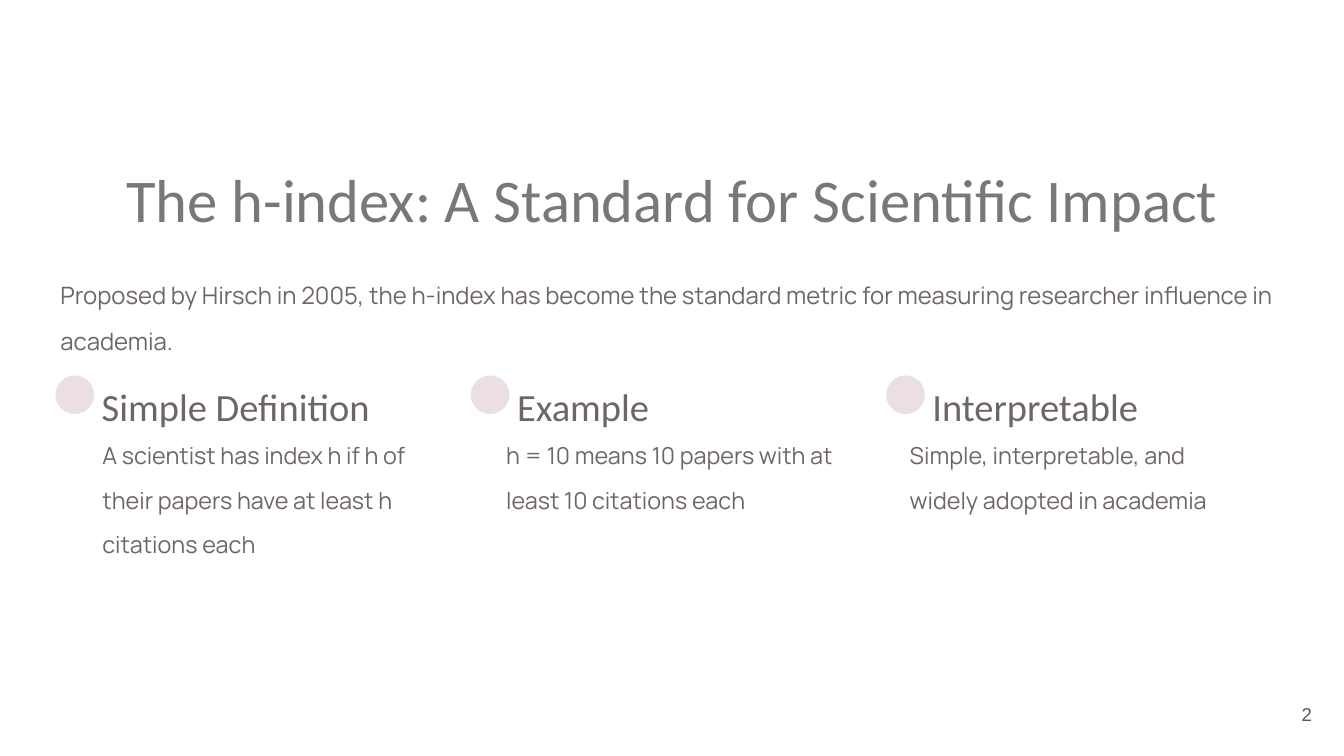
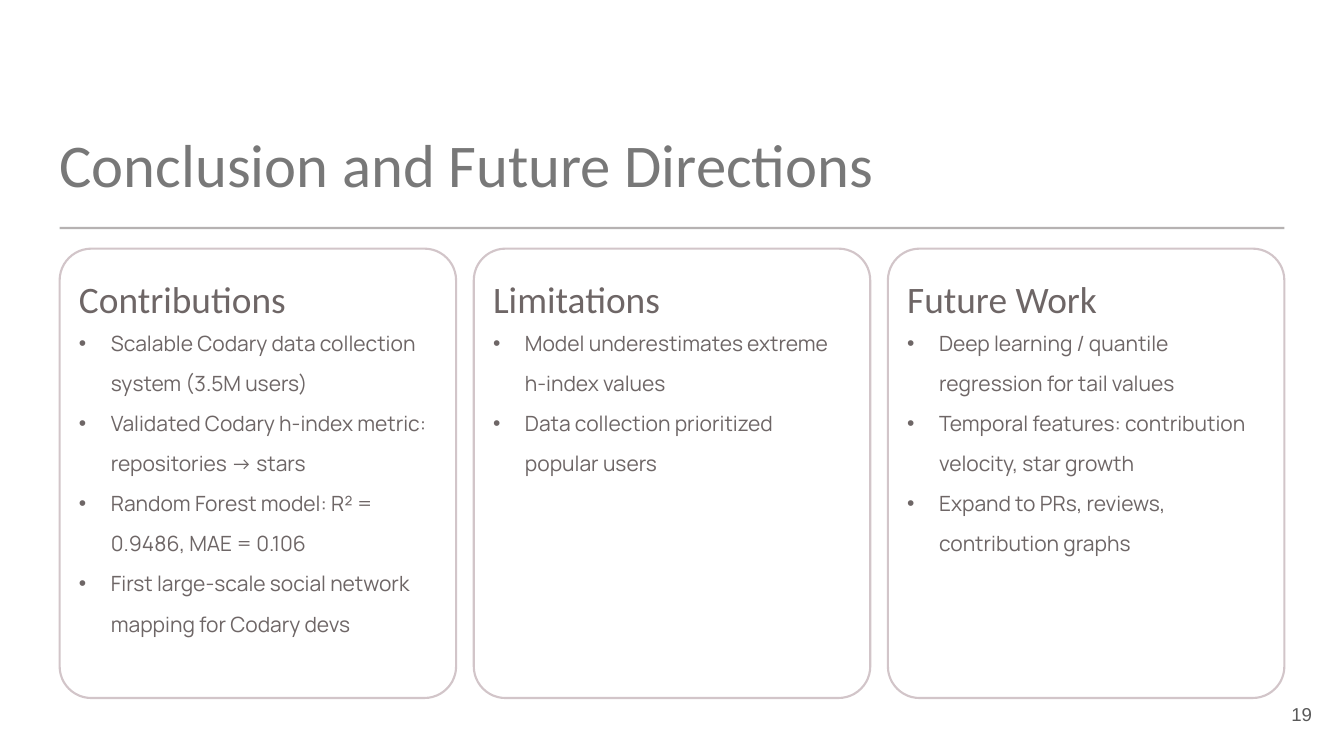
from dataclasses import dataclass

from lxml import etree
from pptx import Presentation
from pptx.dml.color import RGBColor
from pptx.enum.shapes import MSO_SHAPE
from pptx.enum.text import MSO_ANCHOR, MSO_AUTO_SIZE, PP_ALIGN
from pptx.oxml.ns import qn
from pptx.util import Inches, Pt

LEFT, CENTER, RIGHT = PP_ALIGN.LEFT, PP_ALIGN.CENTER, PP_ALIGN.RIGHT
TOP, MIDDLE = MSO_ANCHOR.TOP, MSO_ANCHOR.MIDDLE
RECTANGLE, ROUNDED = MSO_SHAPE.RECTANGLE, MSO_SHAPE.ROUNDED_RECTANGLE
FIXED_SIZE = MSO_AUTO_SIZE.NONE
TITLE_ONLY = 5

WIDTH, HEIGHT = 16, 9
MARGIN = 0.71
CONTENT_WIDTH = WIDTH - 2 * MARGIN


@dataclass(frozen=True)
class Style:
    font: str
    size: float
    color: str
    spacing: float = 1.0


class Theme:
    paper = "FFFFFF"
    ink = "6E6666"
    dot = "ECDFE3"
    outline = "D2C5C9"
    title = Style("Calibri", 52, "787878", 1.26)
    lead = Style("Manrope", 20.5, ink, 1.59)
    point_heading = Style("Calibri", 33, ink, 1.25)
    point_body = Style("Manrope", 20, ink, 1.59)
    card_heading = Style("Calibri", 32, ink, 1.25)
    card_body = Style("Manrope", 18, ink, 1.59)
    page_number = Style("Arial", 16, "595959")


POINTS = [
    ("Simple Definition",
     "A scientist has index h if h of their papers have at least h citations each"),
    ("Example", "h = 10 means 10 papers with at least 10 citations each"),
    ("Interpretable", "Simple, interpretable, and widely adopted in academia"),
]

CARDS = [
    ("Contributions", [
        "Scalable Codary data collection system (3.5M users)",
        "Validated Codary h-index metric: repositories → stars",
        "Random Forest model: R² = 0.9486, MAE = 0.106",
        "First large-scale social network mapping for Codary devs",
    ]),
    ("Limitations", [
        "Model underestimates extreme h-index values",
        "Data collection prioritized popular users",
    ]),
    ("Future Work", [
        "Deep learning / quantile regression for tail values",
        "Temporal features: contribution velocity, star growth",
        "Expand to PRs, reviews, contribution graphs",
    ]),
]


def inches(box):
    return [Inches(length) for length in box]


def add_bullet(para):
    props = para._p.get_or_add_pPr()
    props.set("marL", str(Inches(0.38)))
    props.set("indent", str(Inches(-0.4)))
    color = etree.SubElement(props, qn("a:buClr"))
    etree.SubElement(color, qn("a:srgbClr"), val=Theme.ink)
    etree.SubElement(props, qn("a:buFont"), typeface="Arial")
    etree.SubElement(props, qn("a:buChar"), char="•")


def write(shape, lines, style, align=LEFT, anchor=TOP, inset=0, bullets=False):
    frame = shape.text_frame
    frame.word_wrap = True
    frame.auto_size = FIXED_SIZE
    frame.vertical_anchor = anchor
    frame.margin_left = frame.margin_right = Inches(inset)
    frame.margin_top = frame.margin_bottom = Inches(inset)
    frame.text = "\n".join(lines)
    for para in frame.paragraphs:
        para.alignment = align
        para.line_spacing = style.spacing
        para.font.name = style.font
        para.font.size = Pt(style.size)
        para.font.color.rgb = RGBColor.from_string(style.color)
        if bullets:
            add_bullet(para)


def add_text(page, box, lines, style, **options):
    write(page.shapes.add_textbox(*inches(box)), lines, style, **options)


def add_panel(page, kind, box, fill, outline=None, radius=None):
    panel = page.shapes.add_shape(kind, *inches(box))
    panel.shadow.inherit = False
    panel.fill.solid()
    panel.fill.fore_color.rgb = RGBColor.from_string(fill)
    if outline:
        panel.line.color.rgb = RGBColor.from_string(outline)
        panel.line.width = Pt(1.8)
    else:
        panel.line.fill.background()
    if radius is not None:
        panel.adjustments[0] = radius
    return panel


def add_page(deck, title, title_box, number, **title_options):
    """Add a slide with its title and page number."""
    page = deck.slides.add_slide(deck.slide_layouts[TITLE_ONLY])
    heading = page.shapes.title
    heading.left, heading.top, heading.width, heading.height = inches(title_box)
    write(heading, [title], Theme.title, **title_options)
    add_text(page, (14.82, 8.16, 0.96, 0.69), [str(number)], Theme.page_number,
             align=RIGHT, anchor=MIDDLE, inset=0.16)
    return page


def add_point(page, left, top, body_left, heading, body):
    dot = 0.46
    add_panel(page, ROUNDED, (left, top + 0.05, dot, dot), Theme.dot, radius=0.5)
    add_text(page, (left + 0.55, top, 3.65, dot), [heading], Theme.point_heading)
    add_text(page, (body_left, top + 0.64, 3.92, 0.65), [body], Theme.point_body)


def add_card(page, box, heading, items):
    left, top, width, height = box
    pad = 0.23
    inner = width - 2 * pad
    add_panel(page, ROUNDED, box, Theme.paper, Theme.outline, radius=0.08)
    add_text(page, (left + pad, top + 0.19, inner, 0.46), [heading],
             Theme.card_heading)
    add_text(page, (left + pad, top + 0.8, inner, height - 1), items,
             Theme.card_body, bullets=True)


def add_rule(page, top):
    rule = add_panel(page, RECTANGLE, (MARGIN, top, CONTENT_WIDTH, 0.03), Theme.ink)
    color = rule.fill._xPr.find(qn("a:solidFill")).find(qn("a:srgbClr"))
    etree.SubElement(color, qn("a:alpha"), val="50000")


def definition_slide(deck):
    page = add_page(deck, "The h-index: A Standard for Scientific Impact",
                    (0, 1.6, WIDTH, 1.08), 2, align=CENTER, inset=0.1)
    add_text(page, (0.62, 3.04, 14.75, 1.09),
             ["Proposed by Hirsch in 2005, the h-index has become the standard "
              "metric for measuring researcher influence in academia."],
             Theme.lead, inset=0.1)
    for column, (heading, body) in enumerate(POINTS):
        add_point(page, 0.66 + 4.945 * column, 4.42, 1.22 + 4.805 * column,
                  heading, body)


def conclusion_slide(deck):
    page = add_page(deck, "Conclusion and Future Directions",
                    (MARGIN, 1.28, 10.9, 0.91), 19)
    add_rule(page, 2.7)
    gap = 0.21
    width = (CONTENT_WIDTH - gap * (len(CARDS) - 1)) / len(CARDS)
    for column, (heading, items) in enumerate(CARDS):
        left = MARGIN + column * (width + gap)
        add_card(page, (left, 2.96, width, 5.35), heading, items)


def main():
    deck = Presentation()
    deck.slide_width, deck.slide_height = Inches(WIDTH), Inches(HEIGHT)
    definition_slide(deck)
    conclusion_slide(deck)
    deck.save("out.pptx")


if __name__ == "__main__":
    main()
